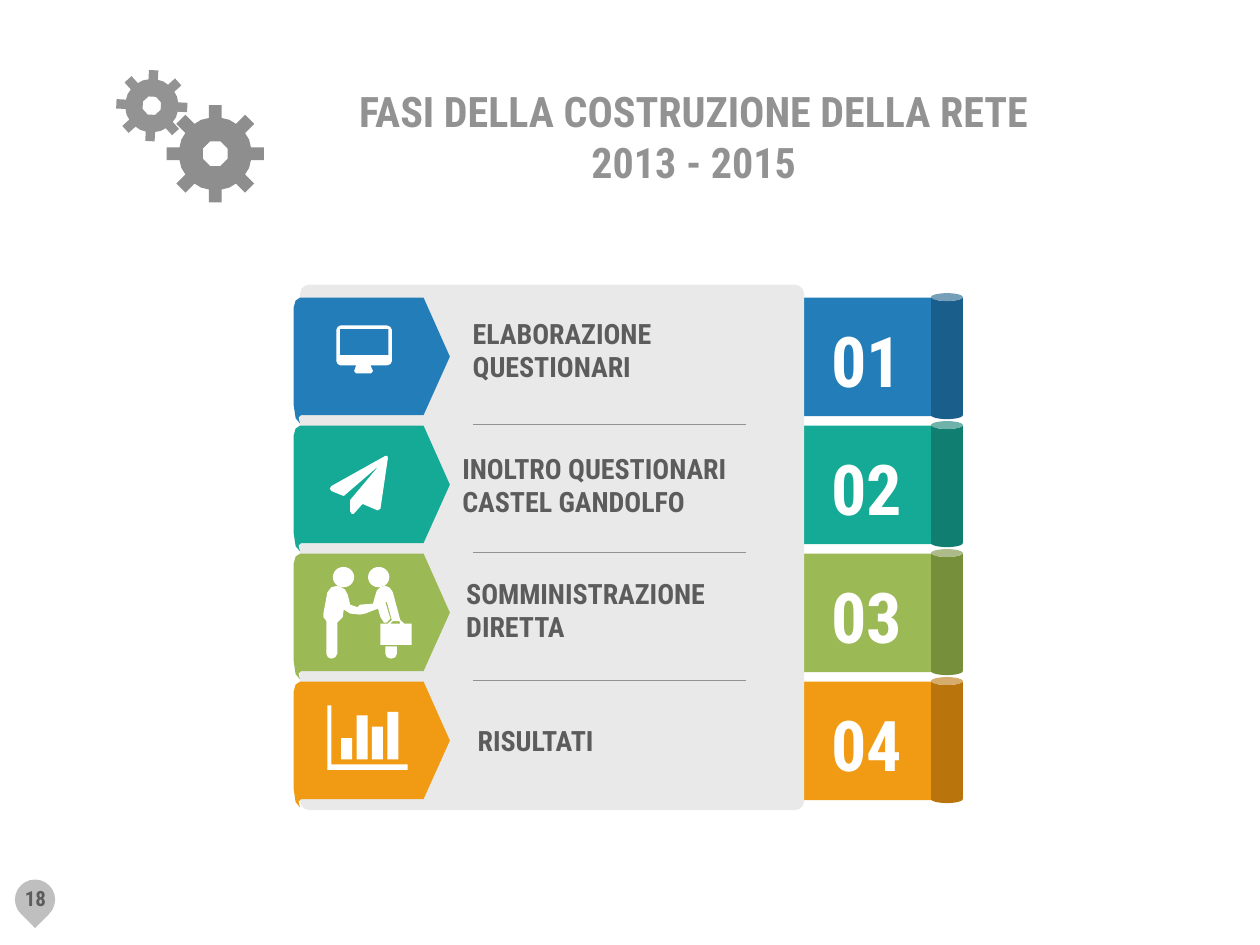
from math import cos, radians, sin

from lxml import etree
from pptx import Presentation
from pptx import util as u
from pptx.dml.color import RGBColor
from pptx.enum import shapes, text
from pptx.oxml.ns import qn

BLUE, NAVY = RGBColor(0x23, 0x7D, 0xB9), RGBColor(0x1A, 0x5E, 0x8B)
TEAL, PINE = RGBColor(0x15, 0xAA, 0x96), RGBColor(0x10, 0x7F, 0x71)
GREEN, MOSS = RGBColor(0x9B, 0xB9, 0x55), RGBColor(0x76, 0x8F, 0x3B)
AMBER, RUST = RGBColor(0xF1, 0x9B, 0x14), RGBColor(0xB9, 0x75, 0x0B)
WHITE = RGBColor(0xFF, 0xFF, 0xFF)
PANEL = RGBColor(0xE9, 0xE9, 0xE9)
PIN = RGBColor(0xBF, 0xBF, 0xBF)
GREY = RGBColor(0x92, 0x92, 0x92)
DARK = RGBColor(0x5C, 0x5C, 0x5C)
STEEL = RGBColor(0x72, 0x72, 0x72)

KIND = shapes.MSO_SHAPE
LEFT, MID = text.PP_ALIGN.LEFT, text.PP_ALIGN.CENTER
TOP, PITCH = 6.0, 2.58


class Deck:
    """Holds the type style and the current slide; lengths are in cm."""

    font = "Roboto Condensed"

    def __init__(self, wide, high):
        self.file = Presentation()
        self.file.slide_width, self.file.slide_height = u.Cm(wide), u.Cm(high)
        self.slide = self.file.slides.add_slide(self.file.slide_layouts[5])
        self.items = self.slide.shapes

    def paint(self, item, color, alpha=None):
        item.shadow.inherit = False
        item.fill.solid()
        item.fill.fore_color.rgb = color
        item.line.fill.background()
        if alpha:
            tone = item._element.spPr.find(qn("a:solidFill"))[0]
            etree.SubElement(tone, qn("a:alpha"), val=str(alpha * 1000))
        return item

    def shape(self, kind, x, y, w, h, color):
        item = self.items.add_shape(kind, *map(u.Cm, (x, y, w, h)))
        return self.paint(item, color)

    def outline(self, x, y, rings, color, alpha=None):
        """Draw closed rings of points measured from (x, y)."""
        rings = [[(u.Cm(x + a), u.Cm(y + b)) for a, b in ring] for ring in rings]
        pen = self.items.build_freeform(*rings[0][0], scale=1.0)
        for n, ring in enumerate(rings):
            if n:
                pen.move_to(*ring[0])
            pen.add_line_segments(ring[1:], close=True)
        return self.paint(pen.convert_to_shape(), color, alpha)

    def rule(self, x, y, end):
        line = self.items.add_connector(
            shapes.MSO_CONNECTOR.STRAIGHT, *map(u.Cm, (x, y, end, y)))
        line.line.color.rgb = GREY
        line.line.width = u.Pt(0.75)
        etree.SubElement(line._element.spPr, qn("a:effectLst"))

    def fill_text(self, frame, paras, size, color, align):
        """Each paragraph is a list of lines."""
        frame.word_wrap = False
        frame.auto_size = text.MSO_AUTO_SIZE.NONE
        frame.vertical_anchor = text.MSO_ANCHOR.MIDDLE
        frame.margin_left = frame.margin_right = 0
        frame.margin_top = frame.margin_bottom = 0
        for n, lines in enumerate(paras):
            para = frame.add_paragraph() if n else frame.paragraphs[0]
            para.alignment = align
            for k, line in enumerate(lines):
                if k:
                    para.add_line_break()
                run = para.add_run()
                run.text = line
                font = run.font
                font.name, font.size, font.bold = self.font, u.Pt(size), True
                font.color.rgb = color

    def label(self, x, y, w, h, lines, size, color, align=LEFT):
        box = self.items.add_textbox(*map(u.Cm, (x, y, w, h)))
        paras = [[line] for line in lines]
        self.fill_text(box.text_frame, paras, size, color, align)

    def title(self, x, y, w, h, lines):
        head = self.items.title
        head.left, head.top, head.width, head.height = map(u.Cm, (x, y, w, h))
        self.fill_text(head.text_frame, [lines], 24, GREY, MID)

    def gear(self, x, y, size, tilt, alpha):
        """Eight teeth around an octagonal hole."""
        def turn(a, b, deg):
            t = radians(deg + tilt)
            return (size * (a * cos(t) - b * sin(t)),
                    size * (a * sin(t) + b * cos(t)))
        tooth = [(0.72, -0.13), (0.98, -0.13), (0.98, 0.13), (0.72, 0.13)]
        rim, hole = [], []
        for deg in range(0, 360, 45):
            rim += [turn(a, b, deg) for a, b in tooth]
            rim.append(turn(0.74, 0, deg + 22.5))
            hole.append(turn(0.27, 0, deg + 22.5))
        self.outline(x, y, [rim, hole], STEEL, alpha)


def block(x, y, end, base):
    return [(x, y), (end, y), (end, base), (x, base)]


# Ribbon and icon outlines
RIBBON = [(0.13, 0), (2.62, 0), (3.15, 1.19), (2.62, 2.37), (0.15, 2.37),
          (0.1, 2.42), (0.13, 2.54), (0.04, 2.43), (0, 2.16), (0, 0.2),
          (0.04, 0.06)]
SCREEN = [[(0, 0.09), (0.03, 0.03), (0.09, 0), (1.02, 0), (1.09, 0.03),
           (1.12, 0.09), (1.12, 0.72), (1.09, 0.78), (1.02, 0.81),
           (0.69, 0.81), (0.74, 0.92), (0.7, 0.97), (0.4, 0.97),
           (0.36, 0.92), (0.4, 0.81), (0.09, 0.81), (0.03, 0.78), (0, 0.72)],
          block(0.07, 0.07, 1.05, 0.6)]
PLANE = [[(1.17, 0.05), (1.02, 1.07), (0.96, 1.1), (0.66, 0.97), (0.48, 1.17),
          (0.44, 1.17), (0.41, 1.12), (0.41, 0.89), (0.99, 0.2), (0.28, 0.81),
          (0.03, 0.71), (0, 0.66), (0.03, 0.61), (1.12, 0), (1.16, 0)]]
PAIR = [[(1.65, 0.76), (1.57, 0.69), (1.42, 0.13), (1.36, 0.04), (1.27, 0),
         (1.17, 0.03), (1.1, 0.09), (1.07, 0.18), (1.02, 0.36), (0.76, 0.38),
         (0.71, 0.43), (0.56, 0.38), (0.51, 0.18), (0.46, 0.08), (0.38, 0.03),
         (0.3, 0), (0.18, 0.03), (0.1, 0.13), (0.02, 0.56), (0.02, 0.63),
         (0.08, 0.71), (0.08, 1.37), (0.11, 1.44), (0.18, 1.47), (0.26, 1.44),
         (0.3, 1.37), (0.3, 0.74), (0.41, 0.63), (0.43, 0.48), (0.56, 0.56),
         (0.76, 0.58), (0.86, 0.56), (1.12, 0.46), (1.17, 0.63), (1.24, 0.74),
         (1.3, 0.74), (1.37, 0.66), (1.27, 0.33), (1.3, 0.33), (1.4, 0.69),
         (1.32, 0.76), (1.17, 0.76), (1.17, 1.19), (1.8, 1.19), (1.8, 0.76)],
        [(1.37, 0.76), (1.42, 0.71), (1.55, 0.71), (1.57, 0.76)]]
LEG = [[(1.27, 1.22), (1.5, 1.22), (1.5, 1.37), (1.47, 1.44), (1.38, 1.47),
        (1.3, 1.44), (1.27, 1.37)]]
BARS = [[(0, 0), (0.08, 0), (0.08, 1.19), (1.62, 1.19), (1.62, 1.3), (0, 1.3)]]
BARS += [block(0.28 + 0.31 * n, y, 0.5 + 0.31 * n, 1.09)
         for n, y in enumerate((0.66, 0.2, 0.43, 0.13))]

# Tone, shade, text place and size, text lines, icons
STEPS = [
    (BLUE, NAVY, (9.53, 6.37, 4.7, 1.37), ["ELABORAZIONE", "QUESTIONARI"],
     [(6.78, 6.56, SCREEN)]),
    (TEAL, PINE, (9.32, 9.09, 6.63, 1.37),
     ["INOLTRO QUESTIONARI", "CASTEL GANDOLFO"], [(6.65, 9.19, PLANE)]),
    (GREEN, MOSS, (9.4, 11.61, 5.94, 1.37), ["SOMMINISTRAZIONE", "DIRETTA"],
     [(6.5, 11.81, PAIR), (6.5, 11.81, LEG)]),
    (AMBER, RUST, (9.63, 14.58, 2.84, 0.69), ["RISULTATI"],
     [(6.6, 14.22, BARS)]),
]


def main():
    deck = Deck(25.4, 19.05)

    # Page number
    pin = deck.shape(KIND.TEAR, 0.3, 17.73, 0.81, 0.81, PIN)
    pin.rotation = 135
    deck.label(0.08, 17.73, 1.27, 0.76, ["18"], 12, DARK, MID)

    # Title and gears
    deck.title(6.15, 1.6, 15.67, 2.29,
               ["FASI DELLA COSTRUZIONE DELLA RETE", "2013 - 2015"])
    deck.gear(4.34, 3.1, 1, 0, 80)
    deck.gear(3.06, 2.13, 0.73, 3, 76)

    # Bands behind the panel
    for n, step in enumerate(STEPS):
        deck.shape(KIND.RECTANGLE, 9.86, TOP + n * PITCH, 9.04, 2.39, step[0])
    panel = deck.shape(KIND.ROUNDED_RECTANGLE, 6.05, 5.74, 10.16, 10.59, PANEL)
    panel.adjustments[0] = 0.018

    # Ribbons, rolls, numbers, labels and icons
    for n, (tone, shade, place, lines, icons) in enumerate(STEPS):
        y = TOP + n * PITCH
        deck.outline(5.92, y, [RIBBON], tone)
        deck.shape(KIND.CAN, 18.77, y - 0.09, 0.64, 2.54, shade)
        deck.label(16.76, y + 0.28, 1.6, 1.95, [f"{n + 1:02}"], 40, WHITE)
        deck.label(*place, lines, 16, DARK)
        if n:
            deck.rule(9.53, y - 0.02, 15.04)
        for left, top, rings in icons:
            deck.outline(left, top, rings, WHITE)

    # Heads of the two people
    for x in (6.71, 7.42):
        deck.shape(KIND.OVAL, x, 11.43, 0.43, 0.41, WHITE)

    deck.file.save("out.pptx")


if __name__ == "__main__":
    main()
